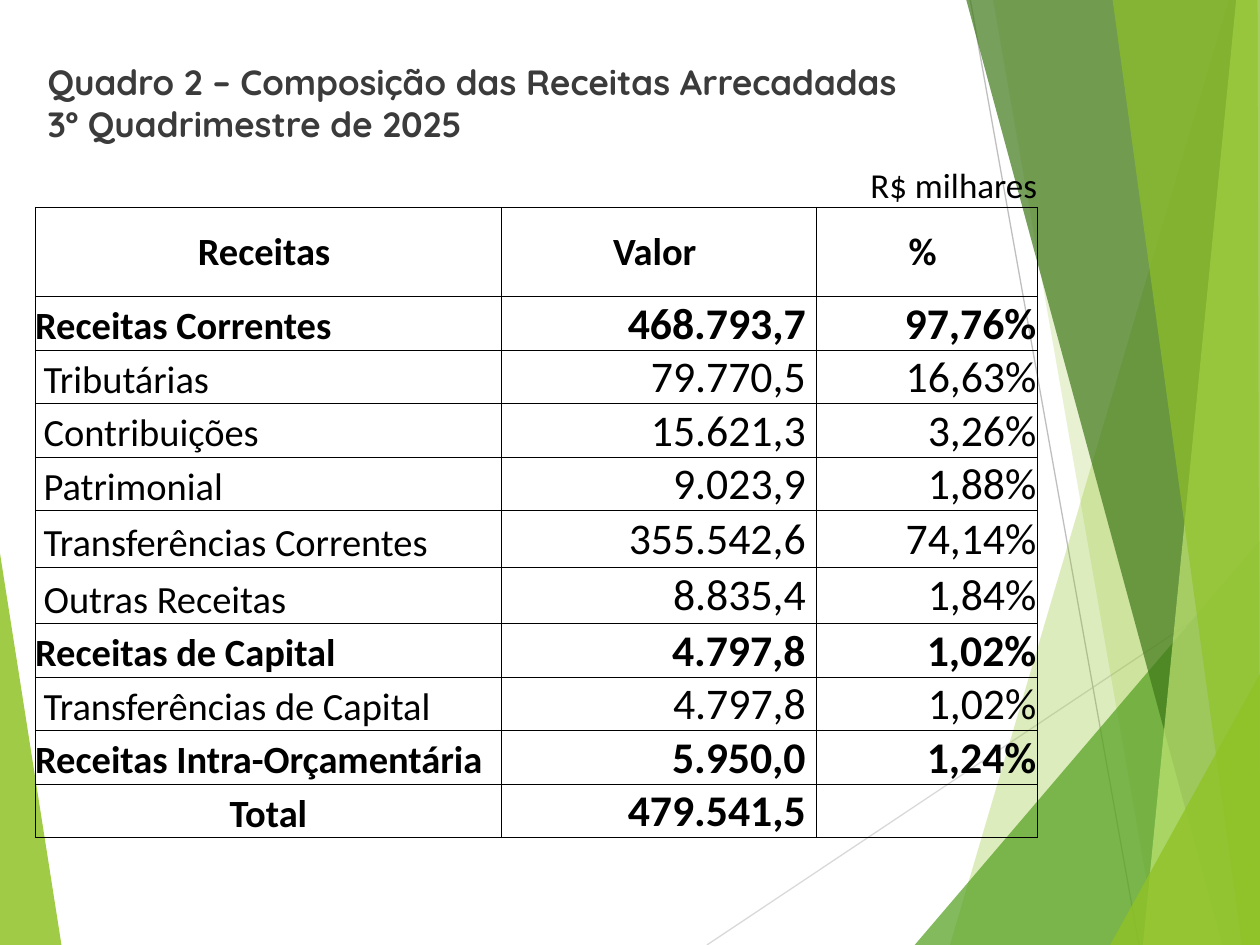
from dataclasses import dataclass

import pptx
import pptx.dml.color
import pptx.enum.text
import pptx.oxml
import pptx.oxml.ns
import pptx.util
from pptx.util import Cm

LEFT, CENTER, RIGHT = (pptx.enum.text.PP_ALIGN.LEFT, pptx.enum.text.PP_ALIGN.CENTER,
                       pptx.enum.text.PP_ALIGN.RIGHT)
MIDDLE = pptx.enum.text.MSO_ANCHOR.MIDDLE
BOTTOM = pptx.enum.text.MSO_ANCHOR.BOTTOM


@dataclass(frozen=True)
class Theme:
    lime: str = "90C226"
    pale: str = "C0E474"
    green: str = "54A021"
    forest: str = "3F7819"
    heading: str = "3B3B3B"
    ink: str = "000000"
    heading_font: str = "Quicksand"
    body_font: str = "Calibri"
    small: int = 20
    label: int = 22
    figure: int = 25


theme = Theme()


def write(frame, text, size, bold=False, color=theme.ink, font=theme.body_font, align=LEFT):
    paragraph = frame.paragraphs[0]
    paragraph.text = text
    paragraph.alignment = align
    for run in paragraph.runs:
        run.font.name = font
        run.font.size = pptx.util.Pt(size)
        run.font.bold = bold
        run.font.color.rgb = pptx.dml.color.RGBColor.from_string(color)


def rule_cell(cell, ruled_sides):
    """Draw thin borders on the given sides (of L, R, T, B) and clear the others."""
    properties = cell._tc.get_or_add_tcPr()
    for side in "LRTB":
        paint = (f'<a:solidFill><a:srgbClr val="{theme.ink}"/></a:solidFill>'
                 if side in ruled_sides else "<a:noFill/>")
        properties.append(pptx.oxml.parse_xml(
            f'<a:ln{side} {pptx.oxml.ns.nsdecls("a")} w="6350">{paint}</a:ln{side}>'))
    cell.fill.background()


deck = pptx.Presentation()
deck.slide_width, deck.slide_height = Cm(25.4), Cm(19.05)
slide = deck.slides.add_slide(deck.slide_layouts[6])
W, H = 25.4, 19.05

# Backdrop: translucent facets (colour, opacity %, corners in cm) and two thin lines
left_facet = (theme.lime, 85, [(0, 11.15), (1.24, H), (0, H)])
right_facets = [
    (theme.lime, 30, [(24.77, 0), (19.15, H), (W, H), (W, 0)]),
    (theme.lime, 20, [(20.02, 0), (23.34, H), (W, H), (W, 0)]),
    (theme.green, 72, [(18.44, H), (W, 10.9), (W, H)]),
    (theme.forest, 70, [(19.48, 0), (24.64, H), (W, H), (W, 0)]),
    (theme.pale, 70, [(24.92, 0), (23.04, H), (W, H), (W, 0)]),
    (theme.lime, 65, [(22.43, 0), (25.04, H), (W, H), (25.35, 0)]),
    (theme.lime, 80, [(22.38, H), (W, 13.59), (W, H)]),
]
thin_lines = [("D9D9D9", 14.25, H, W, 11.61), ("BFBFBF", 19.56, 0, 22.96, H)]

for color, *ends in thin_lines:
    line = slide.shapes.add_connector(
        pptx.enum.shapes.MSO_CONNECTOR.STRAIGHT, *(Cm(end) for end in ends))
    line.line.color.rgb = pptx.dml.color.RGBColor.from_string(color)
    line.line.width = pptx.util.Pt(0.75)
    line._element.spPr.append(pptx.oxml.parse_xml(
        f'<a:effectLst {pptx.oxml.ns.nsdecls("a")}/>'))

for color, opacity, corners in [left_facet, *right_facets]:
    points = [(Cm(x), Cm(y)) for x, y in corners]
    outline = slide.shapes.build_freeform(*points[0])
    outline.add_line_segments(points[1:])
    facet = outline.convert_to_shape()
    facet.shadow.inherit = False
    facet.line.fill.background()
    facet.fill.solid()
    facet.fill.fore_color.rgb = pptx.dml.color.RGBColor.from_string(color)
    tint = facet._element.spPr.find(".//" + pptx.oxml.ns.qn("a:srgbClr"))
    tint.append(pptx.oxml.parse_xml(
        f'<a:alpha {pptx.oxml.ns.nsdecls("a")} val="{opacity * 1000}"/>'))

# Heading
heading = slide.shapes.add_textbox(Cm(0.71), Cm(1.09), Cm(22.8), Cm(1.27)).text_frame
heading.word_wrap = True
write(heading, "Quadro 2 – Composição das Receitas Arrecadadas\n3º Quadrimestre de 2025",
      theme.small, bold=True, color=theme.heading, font=theme.heading_font)

# Revenue table: label, value, share, whether it is a group row
revenues = [
    ("Receitas Correntes", "468.793,7", "97,76%", True),
    ("Tributárias", "79.770,5", "16,63%", False),
    ("Contribuições", "15.621,3", "3,26%", False),
    ("Patrimonial", "9.023,9", "1,88%", False),
    ("Transferências Correntes", "355.542,6", "74,14%", False),
    ("Outras Receitas", "8.835,4", "1,84%", False),
    ("Receitas de Capital", "4.797,8", "1,02%", True),
    ("Transferências de Capital", "4.797,8", "1,02%", False),
    ("Receitas Intra-Orçamentária", "5.950,0", "1,24%", True),
    ("Total", "479.541,5", "", True),
]
column_widths = [9.4, 1.93, 4.42, 4.45]
row_heights = [0.84, 1.8, 0.76, 1.07, 1.07, 1.07, 1.14, 1.14, 1.07, 1.07, 1.07, 1.07]
table = slide.shapes.add_table(
    len(row_heights), len(column_widths), Cm(0.71), Cm(3.33),
    Cm(sum(column_widths)), Cm(sum(row_heights))).table
table.first_row = table.horz_banding = False
for column, width in zip(table.columns, column_widths):
    column.width = Cm(width)
for row, height in zip(table.rows, row_heights):
    row.height = Cm(height)

for row_index, row in enumerate(table.rows):
    for cell in row.cells:
        cell.margin_left = cell.margin_right = cell.margin_top = cell.margin_bottom = 0
        rule_cell(cell, "LRTB" if row_index else "B")
    if row_index:
        row.cells[1].merge(row.cells[2])

unit = table.cell(0, 3)
unit.vertical_anchor = BOTTOM
write(unit.text_frame, "R$ milhares", theme.small, align=RIGHT)

for column_index, title in [(0, "Receitas"), (1, "Valor"), (3, "%")]:
    cell = table.cell(1, column_index)
    cell.vertical_anchor = MIDDLE
    cell.margin_right = Cm(0.17)
    write(cell.text_frame, title, theme.label, bold=True, align=CENTER)

for row_index, (label, value, share, is_group) in enumerate(revenues, start=2):
    name_cell, value_cell, share_cell = (table.cell(row_index, i) for i in (0, 1, 3))
    name_cell.vertical_anchor = BOTTOM
    name_cell.margin_left = Cm(0 if is_group else 0.17)
    write(name_cell.text_frame, label, theme.label, bold=is_group,
          align=CENTER if label == "Total" else LEFT)
    for cell, amount, gap in [(value_cell, value, 0.22), (share_cell, share, 0.02)]:
        cell.vertical_anchor = MIDDLE
        cell.margin_top = Cm(0.02)
        cell.margin_right = Cm(gap)
        write(cell.text_frame, amount, theme.figure, bold=is_group, align=RIGHT)

deck.save("out.pptx")
